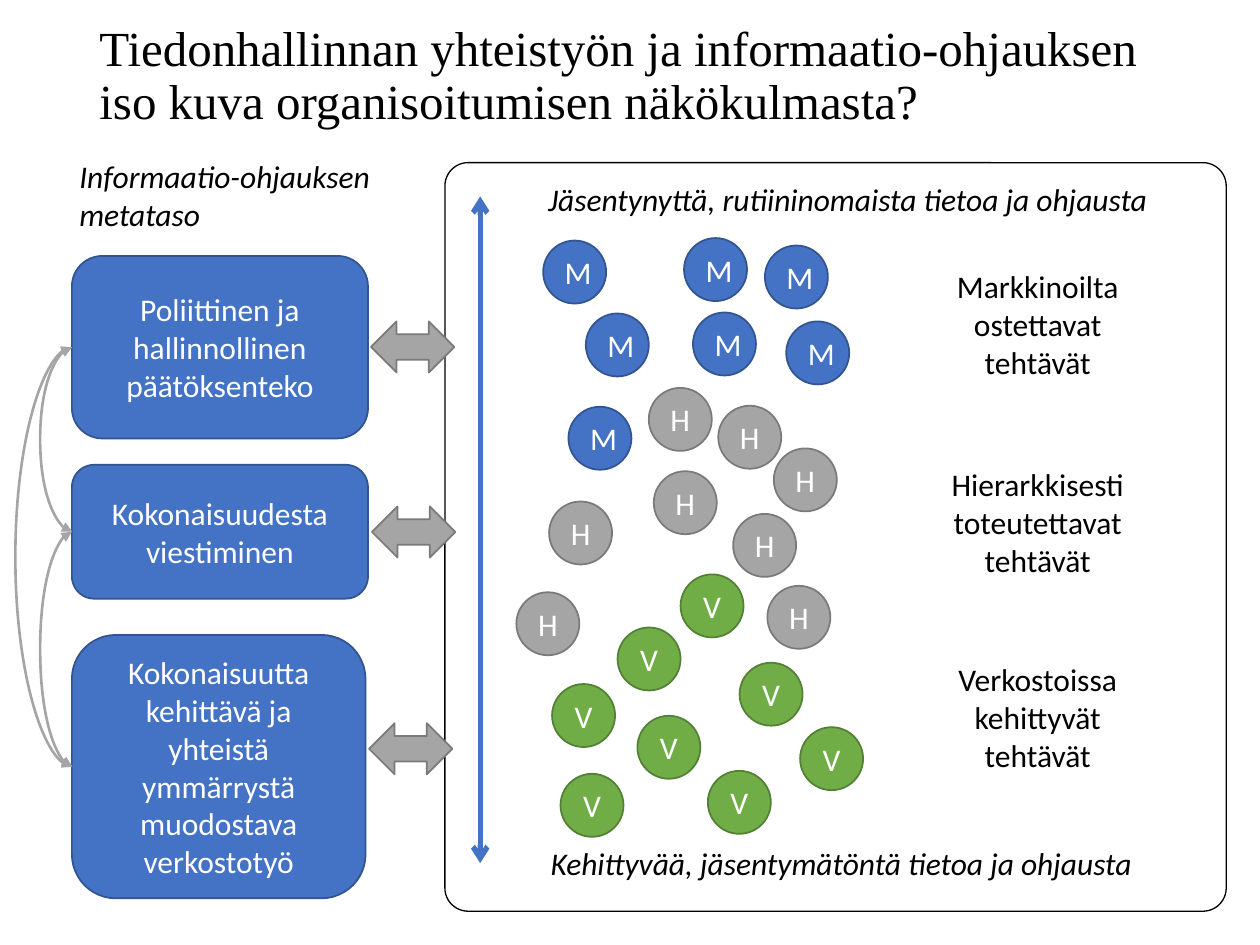
from lxml import etree
from pptx import Presentation
from pptx.dml.color import RGBColor
from pptx.enum import shapes, text
from pptx.oxml import ns
from pptx.util import Cm, Pt

BLACK = RGBColor(0x00, 0x00, 0x00)
WHITE = RGBColor(0xFF, 0xFF, 0xFF)
BLUE, DARK_BLUE = RGBColor(0x44, 0x72, 0xC4), RGBColor(0x32, 0x54, 0x91)
GREY, DARK_GREY = RGBColor(0xA5, 0xA5, 0xA5), RGBColor(0x7A, 0x7A, 0x7A)
GREEN, DARK_GREEN = RGBColor(0x70, 0xAD, 0x47), RGBColor(0x53, 0x80, 0x35)
KIND = shapes.MSO_SHAPE
LEFT, CENTER = text.PP_ALIGN.LEFT, text.PP_ALIGN.CENTER

# All positions and sizes are in centimetres.
TITLE = "Tiedonhallinnan yhteistyön ja informaatio-ohjauksen iso kuva organisoitumisen näkökulmasta?"
CAPTIONS = [  # text, left, top, width, height
    ("Jäsentynyttä, rutiininomaista tietoa ja ohjausta", 10.8, 3.5, 14.6, 1.03),
    ("Kehittyvää, jäsentymätöntä tietoa ja ohjausta", 10.85, 16.9, 13.15, 1.03),
    ("Informaatio-ohjauksen metataso", 1.35, 3.04, 6.53, 1.8),
]
TASKS = [  # text, top, width
    ("Markkinoilta ostettavat tehtävät", 5.26, 4.5),
    ("Hierarkkisesti toteutettavat tehtävät", 9.25, 5.18),
    ("Verkostoissa kehittyvät tehtävät", 13.18, 4.85),
]
TASK_CENTER, TASK_HEIGHT = 20.92, 2.34
CIRCLES = [  # letter, fill, line, left and top of each
    ("M", BLUE, DARK_BLUE, [(11.81, 6.32), (13.97, 6.3), (10.95, 4.85), (15.85, 6.48),
                            (13.79, 4.8), (15.42, 4.95), (11.46, 8.2)]),
    ("H", GREY, DARK_GREY, [(11.07, 10.11), (10.41, 11.94), (14.78, 10.36), (15.47, 11.81),
                            (13.18, 9.5), (14.48, 8.18), (15.6, 9.04), (13.08, 7.82)]),
    ("V", GREEN, DARK_GREEN, [(12.45, 12.65), (14.91, 13.36), (11.13, 13.79), (16.13, 14.66),
                              (14.27, 15.54), (12.85, 14.43), (13.72, 11.58), (11.3, 15.6)]),
]
DIAMETER = 1.27
META_LEFT = 1.45
META = [  # text, top, width, height, left and top of its arrow
    ("Poliittinen ja hallinnollinen päätöksenteko", 5.16, 5.97, 3.68, (7.48, 6.48)),
    ("Kokonaisuudesta viestiminen", 9.37, 5.97, 2.7, (7.5, 10.21)),
    ("Kokonaisuutta kehittävä ja yhteistä ymmärrystä muodostava verkostotyö",
     12.8, 5.92, 5.31, (7.44, 14.58)),
]
LINKS = [(0, 1, 0.64), (1, 2, 0.64), (0, 2, 1.14)]  # from box, to box, bulge
LINK_WIDTH = 0.01


def add_run(p, words, color, font="Calibri", size=18, italic=False):
    r = p.add_run()
    r.text = words
    r.font.name, r.font.size, r.font.italic = font, Pt(size), italic
    r.font.color.rgb = color


def add_label(s, words, box, align=LEFT, italic=False):
    tf = s.shapes.add_textbox(*map(Cm, box)).text_frame
    tf.word_wrap = True
    p = tf.paragraphs[0]
    p.alignment = align
    add_run(p, words, BLACK, italic=italic)


def add_shape(s, kind, box, fill, line, words="", weight=1):
    sp = s.shapes.add_shape(kind, *map(Cm, box))
    sp.shadow.inherit = False
    if fill is None:
        sp.fill.background()
    else:
        sp.fill.solid()
        sp.fill.fore_color.rgb = fill
    sp.line.color.rgb, sp.line.width = line, Pt(weight)
    if words:
        tf = sp.text_frame
        tf.word_wrap = True
        tf.vertical_anchor = text.MSO_ANCHOR.MIDDLE
        p = tf.paragraphs[0]
        p.alignment = CENTER
        add_run(p, words, WHITE)
    return sp


def style_connector(c, color, weight, head):
    """Colour a connector, drop its shadow and put a head on both ends."""
    c.line.color.rgb, c.line.width = color, Pt(weight)
    ln = c.line._get_or_add_ln()
    for end in ("a:headEnd", "a:tailEnd"):
        etree.SubElement(ln, ns.qn(end), type=head)
    etree.SubElement(c._element.spPr, ns.qn("a:effectLst"))


def add_link(s, start, end, bulge):
    """Join the left sides of two boxes with a curve that bulges to the left."""
    # Starting at the box corners keeps the connector unflipped when it is attached.
    c = s.shapes.add_connector(shapes.MSO_CONNECTOR.CURVE,
                               start.left, start.top, end.left, end.top)
    c.begin_connect(start, 1)
    c.end_connect(end, 1)
    c.width = Cm(LINK_WIDTH)
    style_connector(c, GREY, 1.5, "triangle")
    guides = c._element.spPr.find(ns.qn("a:prstGeom")).get_or_add_avLst()
    etree.SubElement(guides, ns.qn("a:gd"), name="adj1",
                     fmla=f"val {round(-bulge / LINK_WIDTH * 100000)}")


def main():
    prs = Presentation()
    prs.slide_width, prs.slide_height = Cm(25.4), Cm(19.05)
    s = prs.slides.add_slide(prs.slide_layouts[5])

    title = s.shapes.title
    title.left, title.top, title.width, title.height = map(Cm, (1.75, 0.5, 21.9, 2.1))
    tf = title.text_frame
    tf.auto_size = text.MSO_AUTO_SIZE.NONE
    tf.vertical_anchor = text.MSO_ANCHOR.MIDDLE
    p = tf.paragraphs[0]
    p.alignment, p.line_spacing = LEFT, 0.9
    add_run(p, TITLE, BLACK, "Times New Roman", 28)

    frame = add_shape(s, KIND.ROUNDED_RECTANGLE, (8.97, 3.28, 15.75, 15.09), None, BLACK, weight=0.75)
    frame.adjustments[0] = 0.031
    axis = s.shapes.add_connector(shapes.MSO_CONNECTOR.STRAIGHT, *map(Cm, (9.68, 3.96, 9.68, 17.4)))
    style_connector(axis, BLUE, 3, "arrow")

    for words, *box in CAPTIONS:
        add_label(s, words, box, italic=True)
    for words, top, width in TASKS:
        add_label(s, words, (TASK_CENTER - width / 2, top, width, TASK_HEIGHT), CENTER)
    for letter, fill, line, spots in CIRCLES:
        for left, top in spots:
            add_shape(s, KIND.OVAL, (left, top, DIAMETER, DIAMETER), fill, line, letter)

    boxes = []
    for words, top, width, height, arrow in META:
        boxes.append(add_shape(s, KIND.ROUNDED_RECTANGLE, (META_LEFT, top, width, height),
                               BLUE, DARK_BLUE, words))
        add_shape(s, KIND.LEFT_RIGHT_ARROW, (*arrow, 1.68, 1.03), GREY, DARK_GREY)
    for start, end, bulge in LINKS:
        add_link(s, boxes[start], boxes[end], bulge)

    prs.save("out.pptx")


if __name__ == "__main__":
    main()
